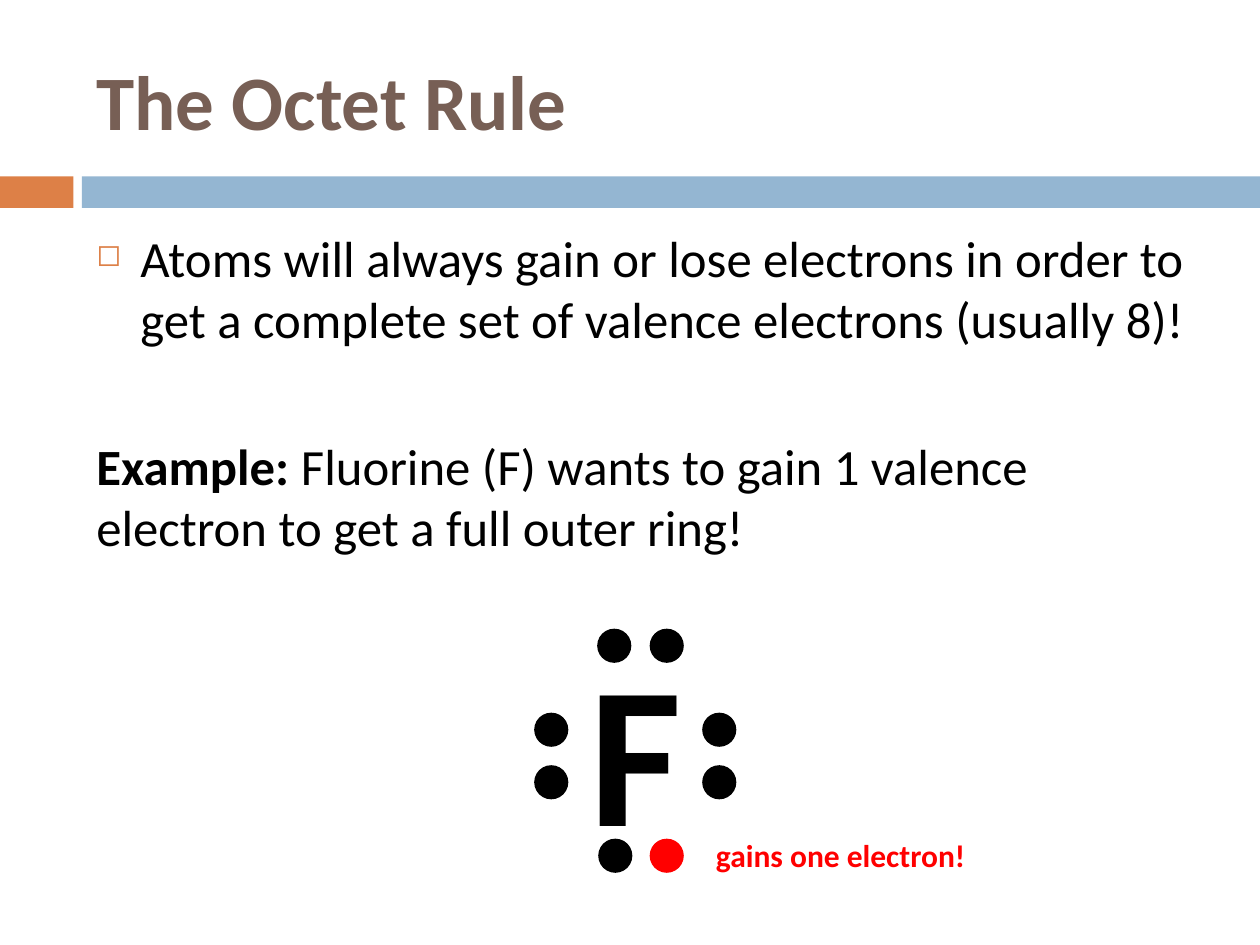
import pptx
import pptx.util
import pptx.dml.color
import pptx.enum.shapes
import pptx.enum.text
import lxml.etree
from dataclasses import dataclass

Pt = pptx.util.Pt
RGB = pptx.dml.color.RGBColor.from_string
SHAPE = pptx.enum.shapes.MSO_SHAPE
ANCHOR = pptx.enum.text.MSO_ANCHOR


@dataclass(frozen=True)
class Theme:
    font: str = "Calibri"
    brown: str = "775F55"
    orange: str = "DD8047"
    blue: str = "94B6D2"
    black: str = "000000"
    red: str = "FF0000"
    title: float = 44
    body: float = 29
    symbol: float = 115
    caption: float = 18


theme = Theme()

deck = pptx.Presentation()
deck.slide_width, deck.slide_height = Pt(720), Pt(540)
slide = deck.slides.add_slide(deck.slide_layouts[6])


def add_filled(kind, left, top, width, height, color, outline=0):
    shape = slide.shapes.add_shape(kind, Pt(left), Pt(top), Pt(width), Pt(height))
    shape.shadow.inherit = False
    shape.fill.solid()
    shape.fill.fore_color.rgb = RGB(color)
    if outline:
        shape.line.color.rgb = RGB(color)
        shape.line.width = Pt(outline)
    else:
        shape.line.fill.background()


def add_text(left, top, width, height, paragraphs, size, color, bold=False):
    frame = slide.shapes.add_textbox(Pt(left), Pt(top), Pt(width), Pt(height)).text_frame
    frame.word_wrap = True
    for index, words in enumerate(paragraphs):
        paragraph = frame.paragraphs[0] if index == 0 else frame.add_paragraph()
        paragraph.text = words
        paragraph.font.name = theme.font
        paragraph.font.size = Pt(size)
        paragraph.font.color.rgb = RGB(color)
        paragraph.font.bold = bold
    return frame


# Band under the title
add_filled(SHAPE.RECTANGLE, 0, 100.8, 42, 18, theme.orange)
add_filled(SHAPE.RECTANGLE, 46.8, 100.8, 673.2, 18, theme.blue)

# Title
title = add_text(48, 18, 642, 78, ["The Octet Rule"], theme.title, theme.brown, True)
title.vertical_anchor = ANCHOR.MIDDLE

# Rule and example
body = add_text(48, 126, 642, 354, [
    "Atoms will always gain or lose electrons in order to "
    "get a complete set of valence electrons (usually 8)!",
    "",
], theme.body, theme.black)
rule, example = body.paragraphs
rule.space_before = Pt(7)
example.space_before = Pt(49.4)

label = example.add_run()
label.text = "Example: "
label.font.bold = True
example.add_run().text = "Fluorine (F) wants to gain 1 valence electron to get a full outer ring!"

# Square bullet on the rule
rule_format = rule._p.get_or_add_pPr()
rule_format.set("marL", str(Pt(25.2)))
rule_format.set("indent", str(-Pt(25.2)))
namespace = rule_format.nsmap["a"]
bullet_color = lxml.etree.Element(f"{{{namespace}}}buClr")
lxml.etree.SubElement(bullet_color, f"{{{namespace}}}srgbClr", val=theme.orange)
bullet_size = lxml.etree.Element(f"{{{namespace}}}buSzPct", val="60000")
bullet_mark = lxml.etree.Element(f"{{{namespace}}}buChar", char="◻")
default_font = rule_format.find(f"{{{namespace}}}defRPr")
for part in (bullet_color, bullet_size, bullet_mark):
    if default_font is None:
        rule_format.append(part)
    else:
        default_font.addprevious(part)

# Fluorine symbol
add_text(330, 354, 90, 147, ["F"], theme.symbol, theme.black, True)

# Valence electrons in pairs: right, left, top, bottom
electrons = [
    (402, 408), (402, 438),
    (306, 408), (306, 438),
    (342, 360), (372, 360),
    (342.6, 480),
]
for left, top in electrons:
    add_filled(SHAPE.OVAL, left, top, 18, 18, theme.black, 1.5)

# Gained electron and its caption
add_filled(SHAPE.OVAL, 372, 480, 18, 18, theme.red, 1.5)
add_text(402, 474, 240, 29, ["gains one electron!"], theme.caption, theme.red, True)

deck.save("out.pptx")
